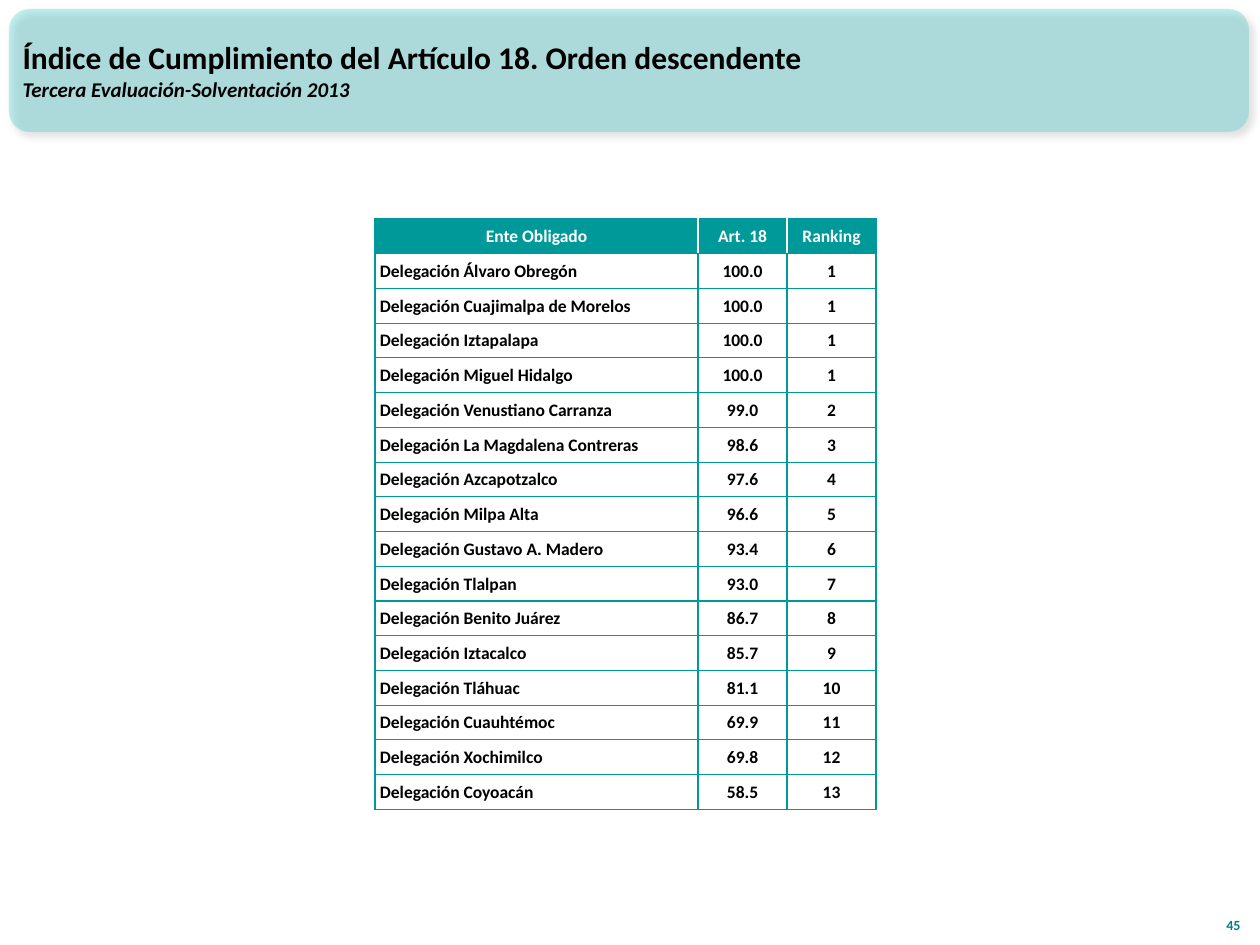
"""Build the slide ranking the boroughs by compliance with Article 18."""
from dataclasses import dataclass
from typing import NamedTuple

from lxml import etree
from pptx import Presentation
from pptx import util as u
from pptx.dml.color import RGBColor
from pptx.enum import shapes, text
from pptx.oxml import ns

SCALE = u.Inches(1) / 126


@dataclass(frozen=True)
class Theme:
    font: str = "Calibri"
    teal: str = "009999"
    banner: str = "33CCCC"
    number: str = "008080"
    black: str = "000000"
    white: str = "FFFFFF"
    title_size: int = 18
    subtitle_size: int = 12
    table_size: int = 10
    number_size: int = 8
    border: float = 0.75


class Box(NamedTuple):
    left: int
    top: int
    width: int
    height: int


class Ranking(NamedTuple):
    name: str
    score: str
    rank: str


THEME = Theme()
BANNER = Box(9, 9, 1240, 123)
TITLE = Box(10, 11, 1155, 118)
TABLE = Box(375, 219, 501, 591)
NUMBER = Box(1203, 890, 50, 50)
COLUMNS = (323, 89, 89)
HEADER = Ranking("Ente Obligado", "Art. 18", "Ranking")
RANKINGS = [
    Ranking("Delegación Álvaro Obregón", "100.0", "1"),
    Ranking("Delegación Cuajimalpa de Morelos", "100.0", "1"),
    Ranking("Delegación Iztapalapa", "100.0", "1"),
    Ranking("Delegación Miguel Hidalgo", "100.0", "1"),
    Ranking("Delegación Venustiano Carranza", "99.0", "2"),
    Ranking("Delegación La Magdalena Contreras", "98.6", "3"),
    Ranking("Delegación Azcapotzalco", "97.6", "4"),
    Ranking("Delegación Milpa Alta", "96.6", "5"),
    Ranking("Delegación Gustavo A. Madero", "93.4", "6"),
    Ranking("Delegación Tlalpan", "93.0", "7"),
    Ranking("Delegación Benito Juárez", "86.7", "8"),
    Ranking("Delegación Iztacalco", "85.7", "9"),
    Ranking("Delegación Tláhuac", "81.1", "10"),
    Ranking("Delegación Cuauhtémoc", "69.9", "11"),
    Ranking("Delegación Xochimilco", "69.8", "12"),
    Ranking("Delegación Coyoacán", "58.5", "13"),
]


def px(length: int) -> u.Emu:
    return u.Emu(round(length * SCALE))


def place(box: Box) -> list[u.Emu]:
    return [px(length) for length in box]


def add_element(parent, tag: str, **attributes):
    values = {key: str(value) for key, value in attributes.items()}
    return etree.SubElement(parent, ns.qn(tag), values)


def add_color(parent, color: str, alpha: int) -> None:
    add_element(add_element(parent, "a:srgbClr", val=color), "a:alpha", val=alpha * 1000)


def write(paragraph, content: str, size: int, color: str, align, italic: bool = False) -> None:
    paragraph.text = content
    paragraph.alignment = align
    font = paragraph.font
    font.name, font.size, font.bold, font.italic = THEME.font, u.Pt(size), True, italic
    font.color.rgb = RGBColor.from_string(color)


def draw_banner(slide) -> None:
    shape = slide.shapes.add_shape(shapes.MSO_SHAPE.ROUNDED_RECTANGLE, *place(BANNER))
    shape.shadow.inherit = False
    shape.line.fill.background()
    properties = shape.fill._xPr
    shape.fill.solid()
    shape.fill.fore_color.rgb = RGBColor.from_string(THEME.banner)
    color = properties.find(ns.qn("a:solidFill")).find(ns.qn("a:srgbClr"))
    add_element(color, "a:alpha", val=30000)
    shadow = add_element(
        properties.find(ns.qn("a:effectLst")), "a:outerShdw",
        blurRad=u.Pt(4), dist=u.Pt(3), dir=45 * 60000, algn="tl", rotWithShape=0,
    )
    add_color(shadow, THEME.black, 40)


def draw_title(slide) -> None:
    title = slide.shapes.title
    title.left, title.top, title.width, title.height = place(TITLE)
    frame = title.text_frame
    frame.word_wrap = True
    frame.auto_size = text.MSO_AUTO_SIZE.NONE
    frame.vertical_anchor = text.MSO_ANCHOR.MIDDLE
    write(frame.paragraphs[0], "Índice de Cumplimiento del Artículo 18. Orden descendente",
          THEME.title_size, THEME.black, text.PP_ALIGN.LEFT)
    write(frame.add_paragraph(), "Tercera Evaluación-Solventación 2013",
          THEME.subtitle_size, THEME.black, text.PP_ALIGN.LEFT, italic=True)


def draw_number(slide) -> None:
    frame = slide.shapes.add_textbox(*place(NUMBER)).text_frame
    frame.word_wrap = True
    frame.vertical_anchor = text.MSO_ANCHOR.BOTTOM
    write(frame.paragraphs[0], "45", THEME.number_size, THEME.number, text.PP_ALIGN.RIGHT)


def set_borders(cell, left: str, right: str) -> None:
    properties = cell._tc.get_or_add_tcPr()
    sides = {"L": left, "R": right, "T": THEME.teal, "B": THEME.teal}
    for side, color in sides.items():
        line = add_element(properties, f"a:ln{side}", w=u.Pt(THEME.border))
        add_color(add_element(line, "a:solidFill"), color, 100)


def format_cell(cell, content: str, column: int, is_header: bool) -> None:
    inner = THEME.white if is_header else THEME.teal
    last = len(COLUMNS) - 1
    set_borders(cell, inner if column > 0 else THEME.teal, inner if column < last else THEME.teal)
    if is_header:
        cell.fill.solid()
        cell.fill.fore_color.rgb = RGBColor.from_string(THEME.teal)
    else:
        cell.fill.background()
    is_name = column == 0 and not is_header
    side = 0 if is_header else px(1)
    cell.margin_left = px(5) if is_name else side
    cell.margin_right = cell.margin_top = side
    cell.margin_bottom = 0
    cell.vertical_anchor = text.MSO_ANCHOR.MIDDLE
    write(cell.text_frame.paragraphs[0], content, THEME.table_size,
          THEME.white if is_header else THEME.black,
          text.PP_ALIGN.LEFT if is_name else text.PP_ALIGN.CENTER)


def draw_table(slide) -> None:
    rows = [HEADER, *RANKINGS]
    table = slide.shapes.add_table(len(rows), len(COLUMNS), *place(TABLE)).table
    table.horz_banding = False
    for column, width in zip(table.columns, COLUMNS):
        column.width = px(width)
    for row_index, row in enumerate(rows):
        for column_index, content in enumerate(row):
            format_cell(table.cell(row_index, column_index), content, column_index, row_index == 0)


def main() -> None:
    presentation = Presentation()
    presentation.slide_width, presentation.slide_height = px(1260), px(945)
    slide = presentation.slides.add_slide(presentation.slide_layouts[5])
    draw_banner(slide)
    title = slide.shapes.title._element
    title.getparent().append(title)
    draw_number(slide)
    draw_title(slide)
    draw_table(slide)
    presentation.save("out.pptx")


if __name__ == "__main__":
    main()
